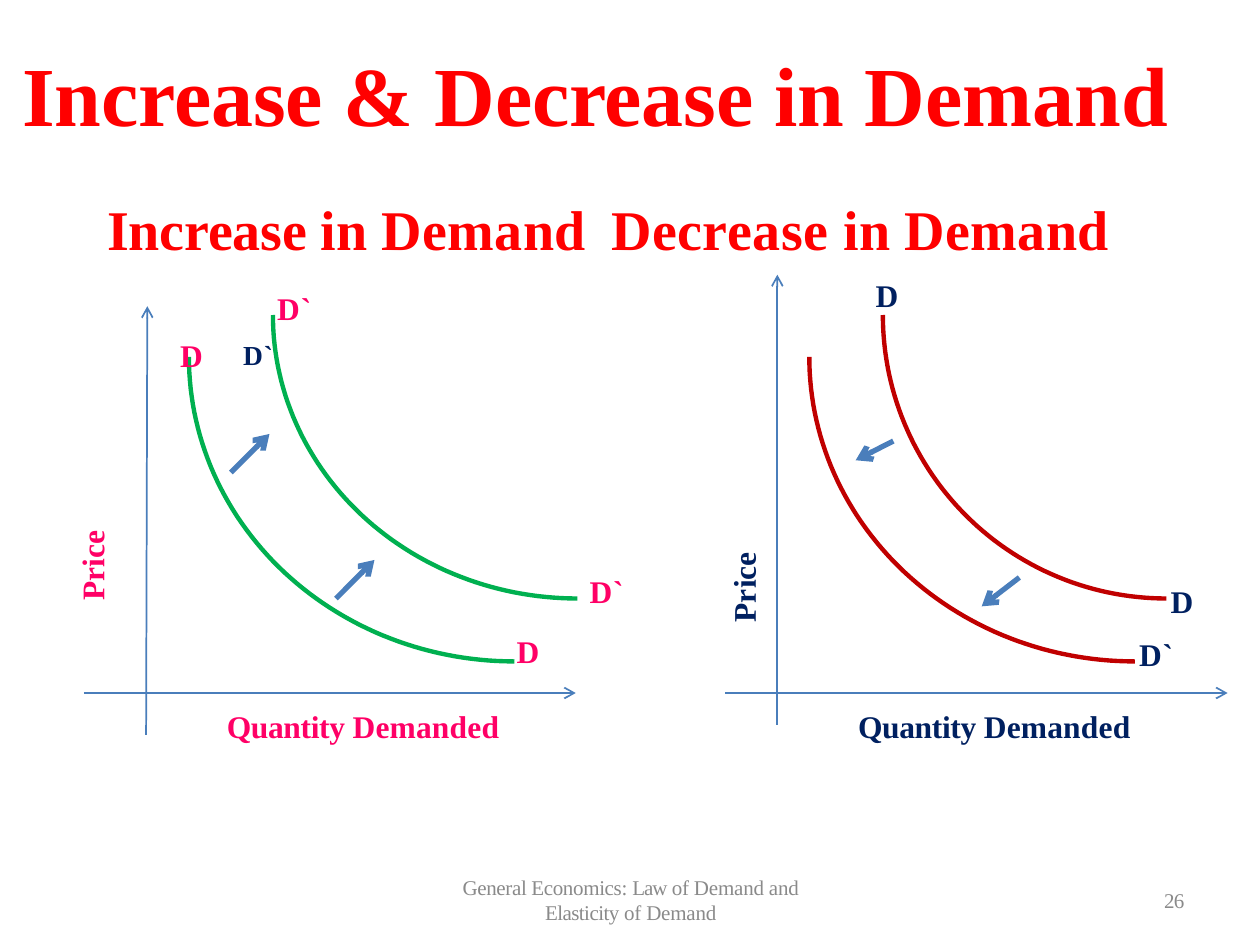
import math

import lxml.etree
import pptx
import pptx.dml.color
import pptx.enum.shapes
import pptx.enum.text
import pptx.oxml.ns
import pptx.util

Pt = pptx.util.Pt
qn = pptx.oxml.ns.qn
CENTER = pptx.enum.text.PP_ALIGN.CENTER
COLORS = {
    "heading": "FF0000",
    "increase": "FF0066",
    "decrease": "002060",
    "increase_curve": "00B050",
    "decrease_curve": "C00000",
    "arrow": "4A7EBB",
    "footer": "8A8A8A",
}


def paragraph(*runs, before=1, indent=0.72, tab=None, leading=None, align=None):
    return {
        "runs": runs,
        "indent": indent,
        "tab": tab,
        "format": {
            "space_before": Pt(before),
            "line_spacing": Pt(leading) if leading else None,
            "alignment": align,
        },
    }


def assign(target, values):
    for name, value in values.items():
        setattr(target, name, value)


class DemandSlide:
    font = "Times New Roman"

    def __init__(self, presentation):
        self.slide = presentation.slides.add_slide(presentation.slide_layouts[6])
        self.shapes = self.slide.shapes

    def color(self, key):
        return pptx.dml.color.RGBColor.from_string(COLORS[key])

    def stroke(self, line, color, width):
        line.color.rgb = self.color(color)
        line.width = Pt(width)

    def arrow(self, points, width):
        shaft = self.shapes.add_connector(
            pptx.enum.shapes.MSO_CONNECTOR.STRAIGHT, *map(Pt, points)
        )
        self.stroke(shaft.line, "arrow", width)
        outline = shaft.line._get_or_add_ln()
        lxml.etree.SubElement(outline, qn("a:tailEnd"), type="arrow")
        lxml.etree.SubElement(shaft._element.spPr, qn("a:effectLst"))

    def curve(self, left, top, right, bottom, color, steps=60):
        angles = [math.pi / 2 * step / steps for step in range(steps + 1)]
        points = [
            (
                Pt(right - (right - left) * math.sin(angle)),
                Pt(top + (bottom - top) * math.cos(angle)),
            )
            for angle in angles
        ]
        builder = self.shapes.build_freeform(*points[0])
        builder.add_line_segments(points[1:], close=False)
        demand = builder.convert_to_shape()
        demand.fill.background()
        demand.shadow.inherit = False
        self.stroke(demand.line, color, 2.5)

    def text(self, box, paragraphs, color, size=18, bold=True, inset=0.72, vertical=False):
        frame = self.shapes.add_textbox(*map(Pt, box)).text_frame
        assign(frame, {
            "word_wrap": True,
            "margin_left": 0,
            "margin_top": Pt(inset),
            "margin_right": 0,
            "margin_bottom": 0,
        })
        if vertical:
            frame._txBody.bodyPr.set("vert", "vert270")
        for index, content in enumerate(paragraphs):
            line = frame.add_paragraph() if index else frame.paragraphs[0]
            assign(line, content["format"])
            properties = line._p.get_or_add_pPr()
            properties.set("marL", str(Pt(content["indent"])))
            properties.set("indent", "0")
            if content["tab"]:
                stops = lxml.etree.SubElement(properties, qn("a:tabLst"))
                lxml.etree.SubElement(
                    stops, qn("a:tab"), pos=str(Pt(content["tab"])), algn="l"
                )
            for words, spacing, *special in content["runs"]:
                run = line.add_run()
                run.text = words
                assign(run.font, {"name": self.font, "size": Pt(size), "bold": bold})
                run.font.color.rgb = self.color(color)
                attributes = run._r.get_or_add_rPr()
                attributes.set("spc", str(round(spacing * 100)))
                if special:
                    raised_size, raised_color, baseline = special
                    run.font.size = Pt(raised_size)
                    run.font.color.rgb = self.color(raised_color)
                    attributes.set("baseline", str(baseline * 1000))

    def label(self, left, top, words, color):
        spacing = 1.1 if words == "D" else 0.5
        self.text((left, top, 24, 24), [paragraph((words, spacing))], color)

    def axis_titles(self, price_at, quantity_left, color):
        letters = paragraph(
            ("P", -0.1), ("r", 0.1), ("ic", -0.1), ("e", 0), before=0, leading=20.1
        )
        self.text((*price_at, 22.3, 41), [letters], color, inset=0, vertical=True)
        quantity = paragraph(("Quantity ", -0.2), ("Demanded", 0.1))
        self.text((quantity_left, 403.2, 159.1, 24), [quantity], color)


def main():
    presentation = pptx.Presentation()
    presentation.slide_width, presentation.slide_height = Pt(720), Pt(540)
    page = DemandSlide(presentation)

    page.text((12.2, 23.8, 699, 59), [paragraph(
        ("Increase ", -0.1), ("& ", 0), ("Decrease in ", -0.1), ("Demand", 0), before=1.1
    )], "heading", size=48)

    diagrams = [
        {
            "axes": [(83.5, 420, 84.2, 175), (48, 396, 329, 396)],
            "curves": [(108, 204, 294, 378), (156, 180, 330, 342)],
            "shifts": [(132, 270, 154, 248), (192, 342, 214, 320)],
            "color": "increase",
            "titles": ((43.2, 303.1), 128.9),
        },
        {
            "axes": [(444.2, 414, 444.2, 157), (414.5, 396, 701.5, 396)],
            "curves": [(504.5, 180, 666.5, 342), (462.5, 204, 648.5, 378)],
            "shifts": [(510.5, 252, 489, 263), (582.5, 330, 561, 346.5)],
            "color": "decrease",
            "titles": ((415.4, 315.4), 489.6),
        },
    ]
    for diagram in diagrams:
        for axis in diagram["axes"]:
            page.arrow(axis, 1)
        for bounds in diagram["curves"]:
            page.curve(*bounds, diagram["color"] + "_curve")
        for shift in diagram["shifts"]:
            page.arrow(shift, 3)
        page.axis_titles(*diagram["titles"], diagram["color"])

    for left, top, words, color in [
        (294.5, 360.7, "D", "increase"),
        (157.7, 164.2, "D`", "increase"),
        (336.2, 326.2, "D`", "increase"),
        (499.7, 157, "D", "decrease"),
    ]:
        page.label(left, top, words, color)

    page.text((102.2, 182.2, 378, 24), [paragraph(
        ("D\t", 1.1), ("D`", 0.7, 27, "decrease", 3), tab=356.4
    )], "increase")
    page.text((650.2, 323.3, 34, 62), [
        paragraph(("D", 1.1), before=9.4, indent=18.7),
        paragraph(("D`", 0.5), before=8.4),
    ], "decrease", inset=9.4)
    page.text((60.5, 110.2, 651, 40.3), [paragraph(
        ("Increase in ", -0.1), ("Demand\tDecrease ", 0.3), ("in ", -0.1), ("Demand", 0.3),
        before=1.1, tab=364.3
    )], "heading", size=32)

    page.text((261.4, 500.4, 198, 30.2), [
        paragraph(("General Economics: ", -0.2), ("Law ", -0.6), ("of Demand and", -0.1),
                  before=0, indent=0, leading=13.8, align=CENTER),
        paragraph(("Elasticity ", -0.3), ("of Demand", -0.1),
                  before=0, indent=0, align=CENTER),
    ], "footer", size=12, bold=False, inset=0)
    page.text((662.4, 503.3, 17.3, 19.4), [paragraph(
        ("26", -0.4), before=0, indent=2.9, leading=13.8
    )], "footer", size=12, bold=False, inset=4.3)

    presentation.save("out.pptx")


if __name__ == "__main__":
    main()
